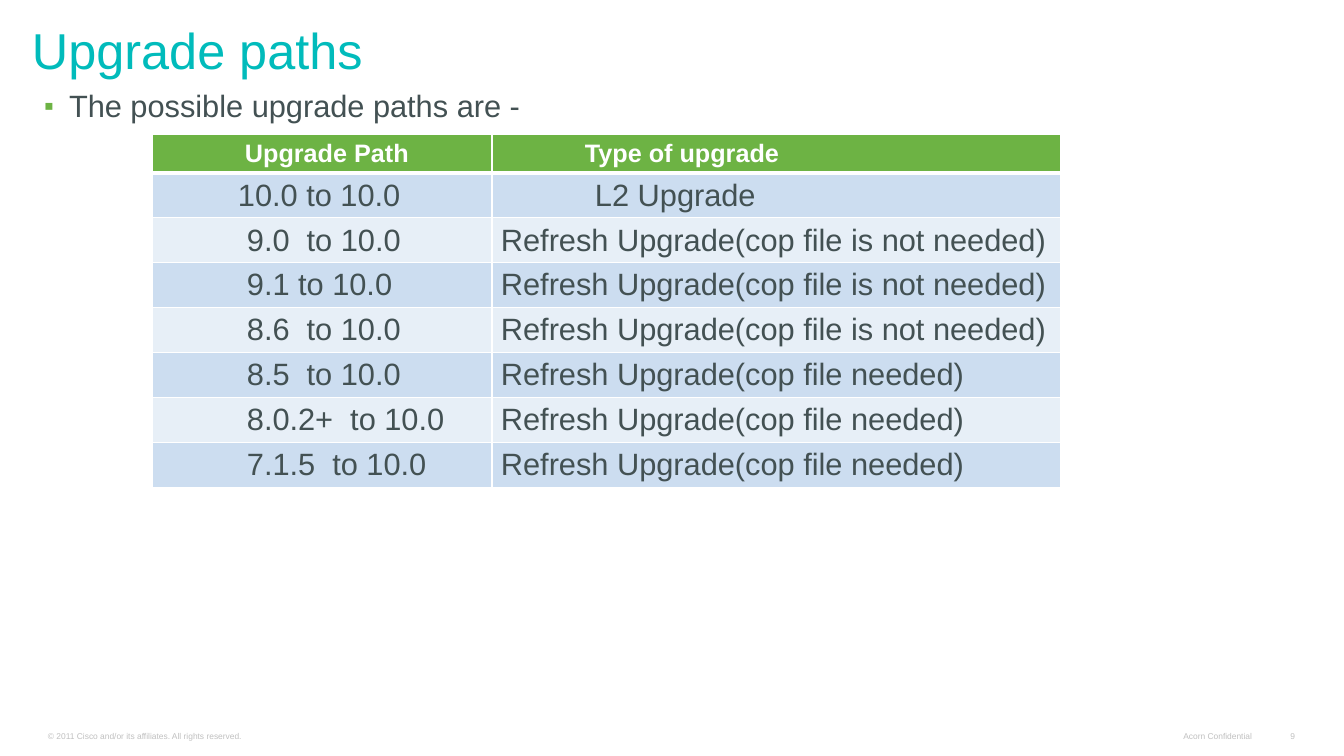
from typing import NamedTuple

from lxml.etree import SubElement
from pptx import Presentation
from pptx.dml.color import RGBColor
from pptx.enum.text import MSO_ANCHOR, PP_ALIGN
from pptx.oxml.ns import qn
from pptx.util import Pt

PX = 9071  # EMU per px, at 100.8 px to the inch
FONT = "Arial"
COLORS = {
    "title": "01BBBB",
    "text": "435153",
    "footer": "C0C0C0",
    "green": "6DB344",
    "band_dark": "CCDDF0",
    "band_light": "E7EFF7",
    "white": "FFFFFF",
}


class Box(NamedTuple):
    x: int
    y: int
    w: int
    h: int


class Footer(NamedTuple):
    text: str
    box: Box
    align: PP_ALIGN


class Upgrade(NamedTuple):
    route: str
    kind: str
    route_indent: int = 95
    kind_indent: int = 9


FOOTERS = [
    Footer("© 2011 Cisco and/or its affiliates. All rights reserved.",
           Box(39, 726, 503, 19), PP_ALIGN.LEFT),
    Footer("Acorn Confidential", Box(1173, 726, 88, 19), PP_ALIGN.RIGHT),
    Footer("9", Box(1276, 726, 28, 19), PP_ALIGN.RIGHT),
]
NO_COP = "Refresh Upgrade(cop file is not needed)"
COP = "Refresh Upgrade(cop file needed)"
HEADER = Upgrade("Upgrade Path", "Type of upgrade", 93, 93)
UPGRADES = [
    Upgrade("10.0 to 10.0", "L2 Upgrade", 86, 103),
    Upgrade("9.0  to 10.0", NO_COP),
    Upgrade("9.1 to 10.0", NO_COP),
    Upgrade("8.6  to 10.0", NO_COP),
    Upgrade("8.5  to 10.0", COP),
    Upgrade("8.0.2+  to 10.0", COP),
    Upgrade("7.1.5  to 10.0", COP),
]
TABLE = Box(152, 134, 909, 351)
ROUTE_W = 340
HEADER_H = 39


def rgb(name: str) -> RGBColor:
    return RGBColor.from_string(COLORS[name])


def write(tf, text: str, *, size: float, color: str, bold: bool = False,
          align: PP_ALIGN = PP_ALIGN.LEFT, spacing: float = 1.0):
    p = tf.paragraphs[0]
    p.alignment, p.line_spacing = align, spacing
    r = p.add_run()
    r.text = text
    r.font.name, r.font.size, r.font.bold = FONT, Pt(size), bold
    r.font.color.rgb = rgb(color)
    return p


def add_text(s, box: Box, text: str, *, anchor: MSO_ANCHOR = MSO_ANCHOR.TOP,
             inset: tuple[int, int] = (9, 5), wrap: bool = True, **fmt):
    tf = s.shapes.add_textbox(*(v * PX for v in box)).text_frame
    tf.word_wrap, tf.vertical_anchor = wrap, anchor
    tf.margin_left = tf.margin_right = inset[0] * PX
    tf.margin_top = tf.margin_bottom = inset[1] * PX
    return write(tf, text, **fmt)


def add_bullet(p, indent: int) -> None:
    pPr = p._p.get_or_add_pPr()
    pPr.set("marL", str(indent * PX))
    pPr.set("indent", str(-indent * PX))
    color = SubElement(pPr, qn("a:buClr"))
    SubElement(color, qn("a:srgbClr"), val=COLORS["green"])
    SubElement(pPr, qn("a:buSzPct"), val="90000")
    SubElement(pPr, qn("a:buFont"), typeface=FONT)
    SubElement(pPr, qn("a:buChar"), char="▪")


def set_borders(cell, widths: dict[str, int]) -> None:
    tcPr = cell._tc.get_or_add_tcPr()
    for i, (side, width) in enumerate(widths.items()):
        ln = tcPr.makeelement(qn(f"a:ln{side}"), {"w": str(Pt(width))})
        fill = SubElement(ln, qn("a:solidFill"))
        SubElement(fill, qn("a:srgbClr"), val=COLORS["white"])
        tcPr.insert(i, ln)


def fill_cell(cell, text: str, indent: int, fill: str,
              borders: dict[str, int], **fmt) -> None:
    cell.margin_left, cell.margin_right = indent * PX, 9 * PX
    cell.margin_top = cell.margin_bottom = 4 * PX
    cell.vertical_anchor = MSO_ANCHOR.MIDDLE
    cell.fill.solid()
    cell.fill.fore_color.rgb = rgb(fill)
    set_borders(cell, borders)
    write(cell.text_frame, text, **fmt)


def add_upgrade_table(s) -> None:
    rows = [HEADER, *UPGRADES]
    table = s.shapes.add_table(len(rows), 2, *(v * PX for v in TABLE)).table
    table.columns[0].width = ROUTE_W * PX
    table.columns[1].width = (TABLE.w - ROUTE_W) * PX
    row_h = (TABLE.h - HEADER_H) * PX // len(UPGRADES)
    for i, row in enumerate(rows):
        table.rows[i].height = row_h if i else HEADER_H * PX
        if i:
            fill = "band_dark" if i % 2 else "band_light"
            fmt = dict(size=22, color="text")
        else:
            fill = "green"
            fmt = dict(size=18, color="white", bold=True)
        borders = {"L": 1, "R": 1, "T": 3 if i == 1 else 1, "B": 1 if i else 3}
        fill_cell(table.cell(i, 0), row.route, row.route_indent, fill, borders, **fmt)
        fill_cell(table.cell(i, 1), row.kind, row.kind_indent, fill, borders, **fmt)


def main() -> None:
    prs = Presentation()
    prs.slide_width, prs.slide_height = 1344 * PX, 756 * PX
    s = prs.slides.add_slide(prs.slide_layouts[6])
    for footer in FOOTERS:
        add_text(s, footer.box, footer.text, anchor=MSO_ANCHOR.BOTTOM, inset=(9, 4),
                 wrap=footer.align == PP_ALIGN.LEFT, align=footer.align,
                 size=6, color="footer")
    add_text(s, Box(23, 20, 1261, 64), "Upgrade paths", anchor=MSO_ANCHOR.BOTTOM,
             size=36, color="title", spacing=0.8)
    p = add_text(s, Box(34, 84, 1259, 507), "The possible upgrade paths are -",
                 inset=(10, 5), size=22, color="text", spacing=0.95)
    add_bullet(p, 25)
    add_upgrade_table(s)
    prs.save("out.pptx")


if __name__ == "__main__":
    main()
